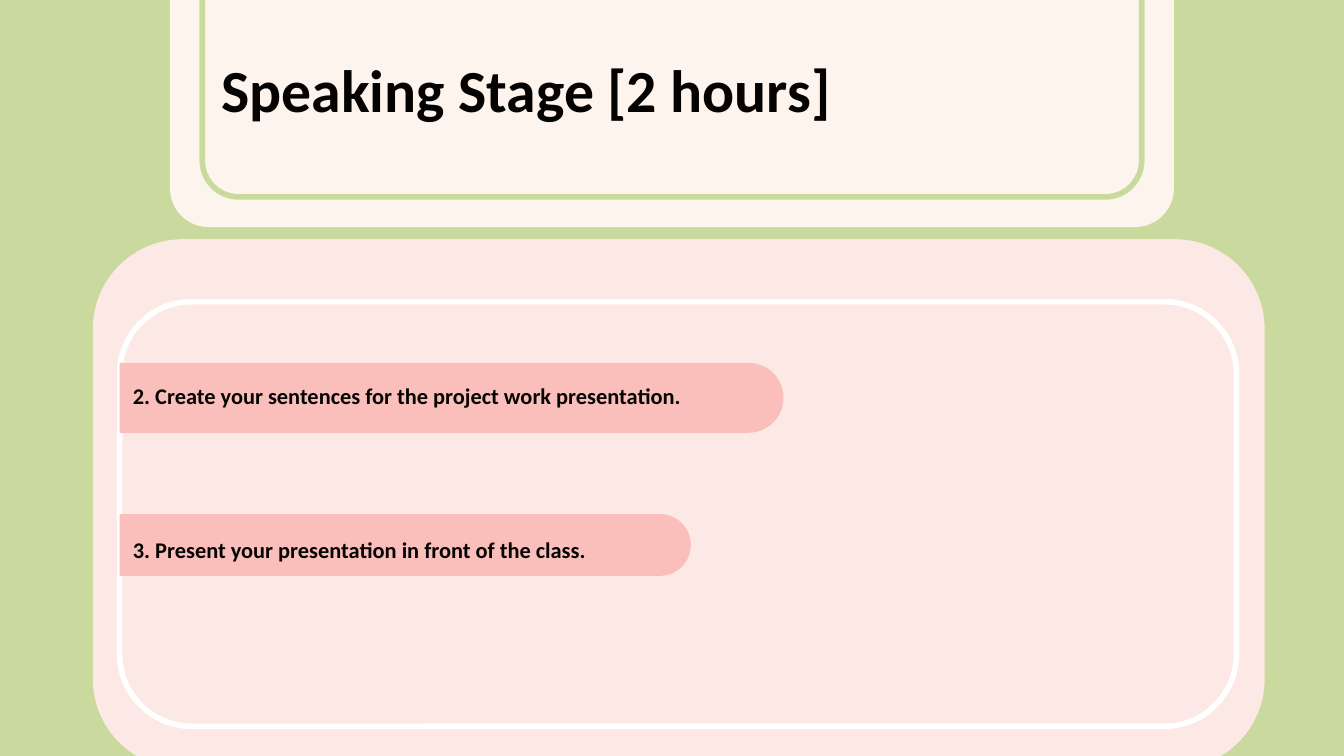
from dataclasses import dataclass

from pptx import Presentation
from pptx.dml.color import RGBColor
from pptx.enum.shapes import MSO_SHAPE
from pptx.enum.text import MSO_ANCHOR, MSO_AUTO_SIZE
from pptx.util import Inches, Pt

CELL = Inches(0.1)
COLUMNS = 100
ROWS = COLUMNS * 9 / 16
GREEN, CREAM, BLUSH, ROSE = "CAD99E", "FDF4ED", "FCE9E6", "FABFBB"
WHITE, INK = "FFFFFF", "040301"
CORNER = 0.17


@dataclass(frozen=True)
class Area:
    column: float
    row: float
    columns: float
    rows: float

    def lengths(self) -> tuple:
        return tuple(round(cells * CELL) for cells in (self.column, self.row, self.columns, self.rows))

    def upright(self) -> "Area":
        shift = (self.columns - self.rows) / 2
        return Area(self.column + shift, self.row - shift, self.rows, self.columns)


@dataclass(frozen=True)
class Outline:
    area: Area
    kind: MSO_SHAPE
    corners: tuple = ()
    fill: str = ""
    line: str = ""
    rotation: float = 0


@dataclass(frozen=True)
class Caption:
    area: Area
    lines: tuple
    size: float
    gap: float = 0


def color(value: str) -> RGBColor:
    return RGBColor.from_string(value)


def draw_outline(shapes, outline: Outline) -> None:
    shape = shapes.add_shape(outline.kind, *outline.area.lengths())
    shape.shadow.inherit = False
    shape.rotation = outline.rotation
    for index, corner in enumerate(outline.corners):
        shape.adjustments[index] = corner
    if outline.fill:
        shape.fill.solid()
        shape.fill.fore_color.rgb = color(outline.fill)
    else:
        shape.fill.background()
    if outline.line:
        shape.line.color.rgb = color(outline.line)
        shape.line.width = Pt(3)
    else:
        shape.line.fill.background()


def draw_group(page, outlines: tuple) -> None:
    group = page.shapes.add_group_shape()
    for outline in outlines:
        draw_outline(group.shapes, outline)


def draw_bar(page, area: Area) -> None:
    draw_outline(page.shapes, Outline(
        area.upright(), MSO_SHAPE.ROUND_2_SAME_RECTANGLE, (0.5, 0), fill=ROSE, rotation=90))


def draw_caption(page, caption: Caption) -> None:
    box = page.shapes.add_textbox(*caption.area.lengths())
    frame = box.text_frame
    frame.word_wrap = True
    frame.auto_size = MSO_AUTO_SIZE.SHAPE_TO_FIT_TEXT
    frame.vertical_anchor = MSO_ANCHOR.TOP
    for index, text in enumerate(caption.lines):
        para = frame.add_paragraph() if index else frame.paragraphs[0]
        para.space_before = Pt(caption.gap if index else 0)
        span = para.add_run()
        span.text = text
        span.font.name = "Calibri"
        span.font.size = Pt(caption.size)
        span.font.bold = True
        span.font.color.rgb = color(INK)


BACKDROP = Outline(Area(0, 0, COLUMNS, ROWS), MSO_SHAPE.RECTANGLE, fill=GREEN)
HEADER = (
    Outline(Area(12.65, -0.1, 74.7, 17), MSO_SHAPE.ROUND_2_SAME_RECTANGLE, (0, CORNER), fill=CREAM),
    Outline(Area(15.05, -1.25, 69.9, 15.9), MSO_SHAPE.ROUND_2_SAME_RECTANGLE, (0, CORNER), line=GREEN),
)
PANEL = (
    Outline(Area(6.9, 17.8, 87.2, 39.4), MSO_SHAPE.ROUNDED_RECTANGLE, (CORNER,), fill=BLUSH),
    Outline(Area(8.9, 22.45, 83.1, 31.6), MSO_SHAPE.ROUNDED_RECTANGLE, (CORNER,), line=WHITE),
)
BARS = (Area(8.9, 38.25, 42.5, 4.6), Area(8.9, 27, 49.4, 5.2))
TITLE = Caption(Area(15.5, 3.45, 75.2, 6.4), ("Speaking Stage [2 hours]",), 32)
STEPS = Caption(
    Area(8.9, 27.95, 61.2, 14.5),
    (
        "2. Create your sentences for the project work presentation.",
        "3. Present your presentation in front of the class.",
    ),
    12,
    gap=68,
)


def main() -> None:
    deck = Presentation()
    deck.slide_width = round(COLUMNS * CELL)
    deck.slide_height = round(ROWS * CELL)
    page = deck.slides.add_slide(deck.slide_layouts[6])
    page.background.fill.solid()
    page.background.fill.fore_color.rgb = color(CREAM)
    draw_outline(page.shapes, BACKDROP)
    draw_group(page, HEADER)
    draw_caption(page, TITLE)
    draw_group(page, PANEL)
    for bar in BARS:
        draw_bar(page, bar)
    draw_caption(page, STEPS)
    deck.save("out.pptx")


if __name__ == "__main__":
    main()
